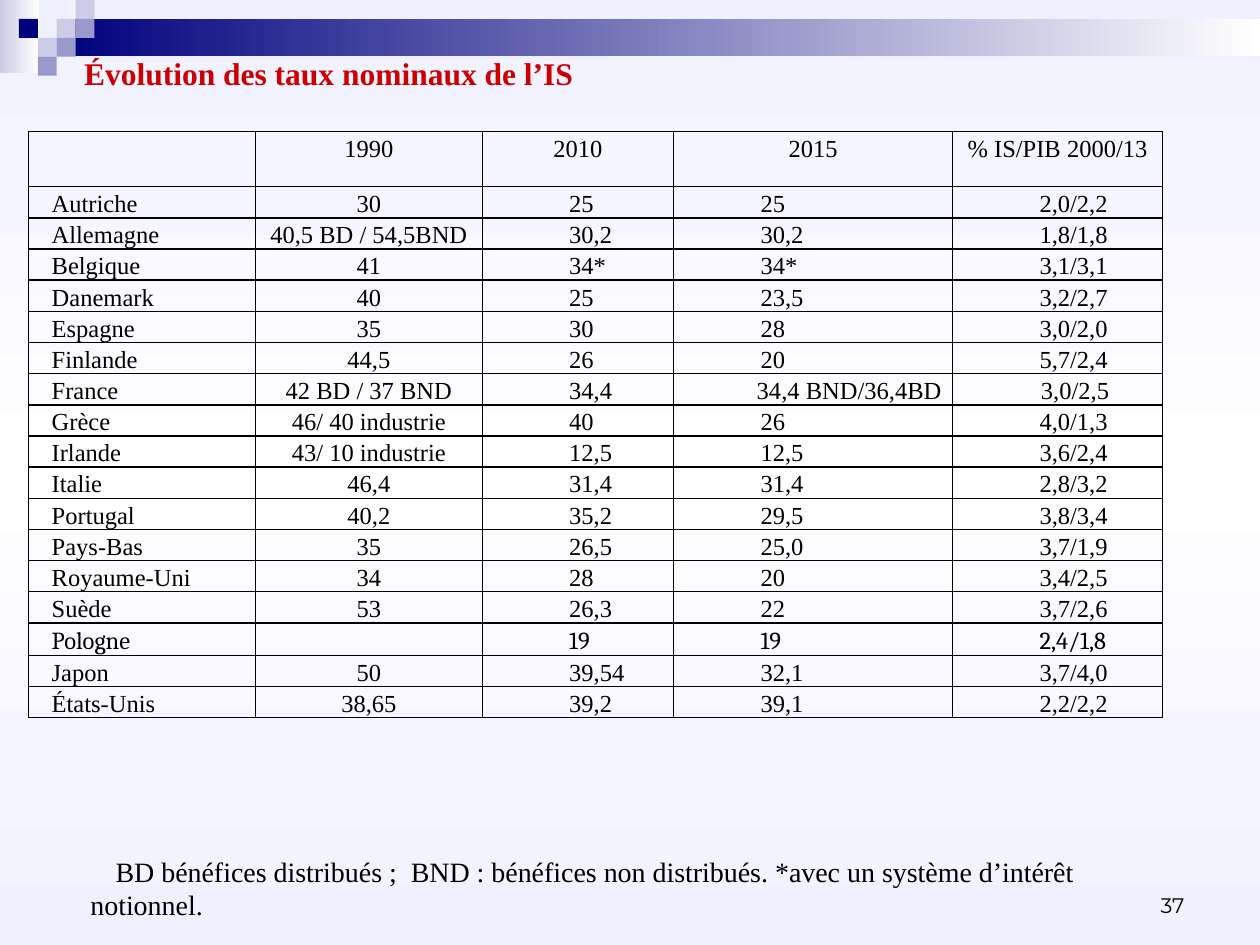
from copy import deepcopy

from lxml.etree import SubElement
from pptx import Presentation
from pptx.dml.color import RGBColor
from pptx.enum.shapes import MSO_SHAPE
from pptx.enum.text import MSO_ANCHOR as ANCHOR, PP_ALIGN as ALIGN
from pptx.oxml.ns import qn
from pptx.util import Pt

BLACK = RGBColor(0x00, 0x00, 0x00)
RED = RGBColor(0xCC, 0x00, 0x00)
NAVY = RGBColor(0x00, 0x00, 0x7D)
LILAC = RGBColor(0xCC, 0xCC, 0xE6)
VIOLET = RGBColor(0x99, 0x99, 0xCC)
PALE = RGBColor(0xF0, 0xF1, 0xFE)
WHITE = RGBColor(0xFF, 0xFF, 0xFF)
SERIF = "Times New Roman"

HEADER = ["", "1990", "2010", "2015", "% IS/PIB 2000/13"]
RATES = [
    ["Autriche", "30", "25", "25", "2,0/2,2"],
    ["Allemagne", "40,5 BD / 54,5BND", "30,2", "30,2", "1,8/1,8"],
    ["Belgique", "41", "34*", "34*", "3,1/3,1"],
    ["Danemark", "40", "25", "23,5", "3,2/2,7"],
    ["Espagne", "35", "30", "28", "3,0/2,0"],
    ["Finlande", "44,5", "26", "20", "5,7/2,4"],
    ["France", "42 BD / 37 BND", "34,4", "34,4 BND/36,4BD", "3,0/2,5"],
    ["Grèce", "46/ 40 industrie", "40", "26", "4,0/1,3"],
    ["Irlande", "43/ 10 industrie", "12,5", "12,5", "3,6/2,4"],
    ["Italie", "46,4", "31,4", "31,4", "2,8/3,2"],
    ["Portugal", "40,2", "35,2", "29,5", "3,8/3,4"],
    ["Pays-Bas", "35", "26,5", "25,0", "3,7/1,9"],
    ["Royaume-Uni", "34", "28", "20", "3,4/2,5"],
    ["Suède", "53", "26,3", "22", "3,7/2,6"],
    ["Pologne", "", "19", "19", "2,4/1,8"],
    ["Japon", "50", "39,54", "32,1", "3,7/4,0"],
    ["États-Unis", "38,65", "39,2", "39,1", "2,2/2,2"],
]
COL_WIDTHS = [129.6, 129.6, 109.4, 159.4, 120]
HEADER_HEIGHT, ROW_HEIGHT = 31.7, 17.8
COL_ALIGN = [ALIGN.LEFT, ALIGN.CENTER, ALIGN.LEFT, ALIGN.JUSTIFY, ALIGN.LEFT]
COL_INDENT = [11.7, 0, 48.2, 48.2, 48.2]
FRANCE_INDENT = {3: 46, 4: 49}

BARS = [
    ((0, 0, 22.3, 41.8), LILAC),
    ((32.4, 10.8, 687.6, 21.4), NAVY),
]
SQUARE = 10.8
SQUARES = [
    (3, 1, LILAC), (4, 0, LILAC), (4, 1, VIOLET), (2, 2, LILAC),
    (1, 1, NAVY), (3, 2, VIOLET), (2, 3, VIOLET),
]

TEXTS = [
    ("37", (569.5, 491.8, 114.5, 36), ANCHOR.BOTTOM, ALIGN.RIGHT, 0,
     {"size": Pt(12), "name": "Montserrat"}, BLACK),
    ("BD bénéfices distribués ;  BND\u00a0: bénéfices non distribués. "
     "*avec un système d’intérêt notionnel.",
     (44.6, 474.5, 640.8, 65.5), ANCHOR.MIDDLE, ALIGN.LEFT, 14.4,
     {"size": Pt(16), "name": SERIF}, BLACK),
    ("Évolution des taux nominaux de l’IS",
     (26.6, 27.4, 404.6, 51.1), ANCHOR.TOP, ALIGN.LEFT, 14.4,
     {"size": Pt(18), "name": SERIF, "bold": True}, RED),
]


def set_all(obj, values):
    for key, value in values.items():
        setattr(obj, key, value)


def add_run(p, text, font, color):
    r = p.add_run()
    r.text = text
    set_all(r.font, font)
    r.font.color.rgb = color


def set_gradient(fill, colors, angle):
    fill.gradient()
    fill.gradient_angle = angle
    for i, (stop, color) in enumerate(zip(fill.gradient_stops, colors)):
        stop.position = i / (len(colors) - 1)
        stop.color.rgb = color


def add_block(s, box, color, fade=False):
    sp = s.shapes.add_shape(MSO_SHAPE.RECTANGLE, *map(Pt, box))
    sp.shadow.inherit = False
    sp.line.fill.background()
    if fade:
        set_gradient(sp.fill, [color, WHITE], 0)
    else:
        sp.fill.solid()
        sp.fill.fore_color.rgb = color


def add_background(s):
    fill = s.background.fill
    set_gradient(fill, [PALE, WHITE, PALE], 90)
    stops = s.element.xpath(".//p:bg//a:gsLst")[0]
    last = deepcopy(stops[0])
    last.set("pos", "100000")
    stops.append(last)


def add_borders(cell):
    tc_pr = cell._tc.get_or_add_tcPr()
    for i, side in enumerate(("lnL", "lnR", "lnT", "lnB")):
        ln = tc_pr.makeelement(qn("a:" + side), {"w": str(Pt(1))})
        tc_pr.insert(i, ln)
        solid = SubElement(ln, qn("a:solidFill"))
        SubElement(solid, qn("a:srgbClr"), {"val": str(BLACK)})


def fill_cell(cell, text, font_name, fmt, indent):
    set_all(cell, {"margin_left": Pt(1.44), "margin_right": Pt(1.44),
                   "margin_top": 0, "margin_bottom": 0})
    cell.fill.background()
    add_borders(cell)
    p = cell.text_frame.paragraphs[0]
    set_all(p, {"line_spacing": 1.15, **fmt})
    p._p.get_or_add_pPr().set("marL", str(Pt(indent)))
    if text:
        add_run(p, text, {"size": Pt(14), "name": font_name}, BLACK)
    else:
        p._p.get_or_add_endParaRPr().set("sz", "1400")


def add_rates(s):
    rows = [HEADER] + RATES
    height = HEADER_HEIGHT + ROW_HEIGHT * len(RATES)
    box = (16.4, 75, sum(COL_WIDTHS), height)
    table = s.shapes.add_table(len(rows), len(HEADER), *map(Pt, box)).table
    set_all(table, {"first_row": False, "horz_banding": False})
    for col, width in zip(table.columns, COL_WIDTHS):
        col.width = Pt(width)
    for i, values in enumerate(rows):
        table.rows[i].height = Pt(ROW_HEIGHT if i else HEADER_HEIGHT)
        name = "Cambria" if values[0] == "Pologne" else SERIF
        for j, text in enumerate(values):
            indent = COL_INDENT[j] if i else 0
            if values[0] == "France":
                indent = FRANCE_INDENT.get(j, indent)
            fmt = {"alignment": COL_ALIGN[j] if i else ALIGN.CENTER,
                   "space_before": Pt(2 if i else 4),
                   "space_after": Pt(1 if i else 4)}
            fill_cell(table.cell(i, j), text, name, fmt, indent)


def add_text(s, text, box, anchor, align, indent, font, color):
    tf = s.shapes.add_textbox(*map(Pt, box)).text_frame
    set_all(tf, {"word_wrap": True, "vertical_anchor": anchor})
    p = tf.paragraphs[0]
    p.alignment = align
    p._p.get_or_add_pPr().set("indent", str(Pt(indent)))
    add_run(p, text, font, color)


def main():
    prs = Presentation()
    set_all(prs, {"slide_width": Pt(720), "slide_height": Pt(540)})
    s = prs.slides.add_slide(prs.slide_layouts[6])
    add_background(s)
    for box, color in BARS:
        add_block(s, box, color, fade=True)
    for col, row, color in SQUARES:
        box = (col * SQUARE, row * SQUARE, SQUARE, SQUARE)
        add_block(s, box, color)
    add_rates(s)
    for item in TEXTS:
        add_text(s, *item)
    prs.save("out.pptx")


if __name__ == "__main__":
    main()
